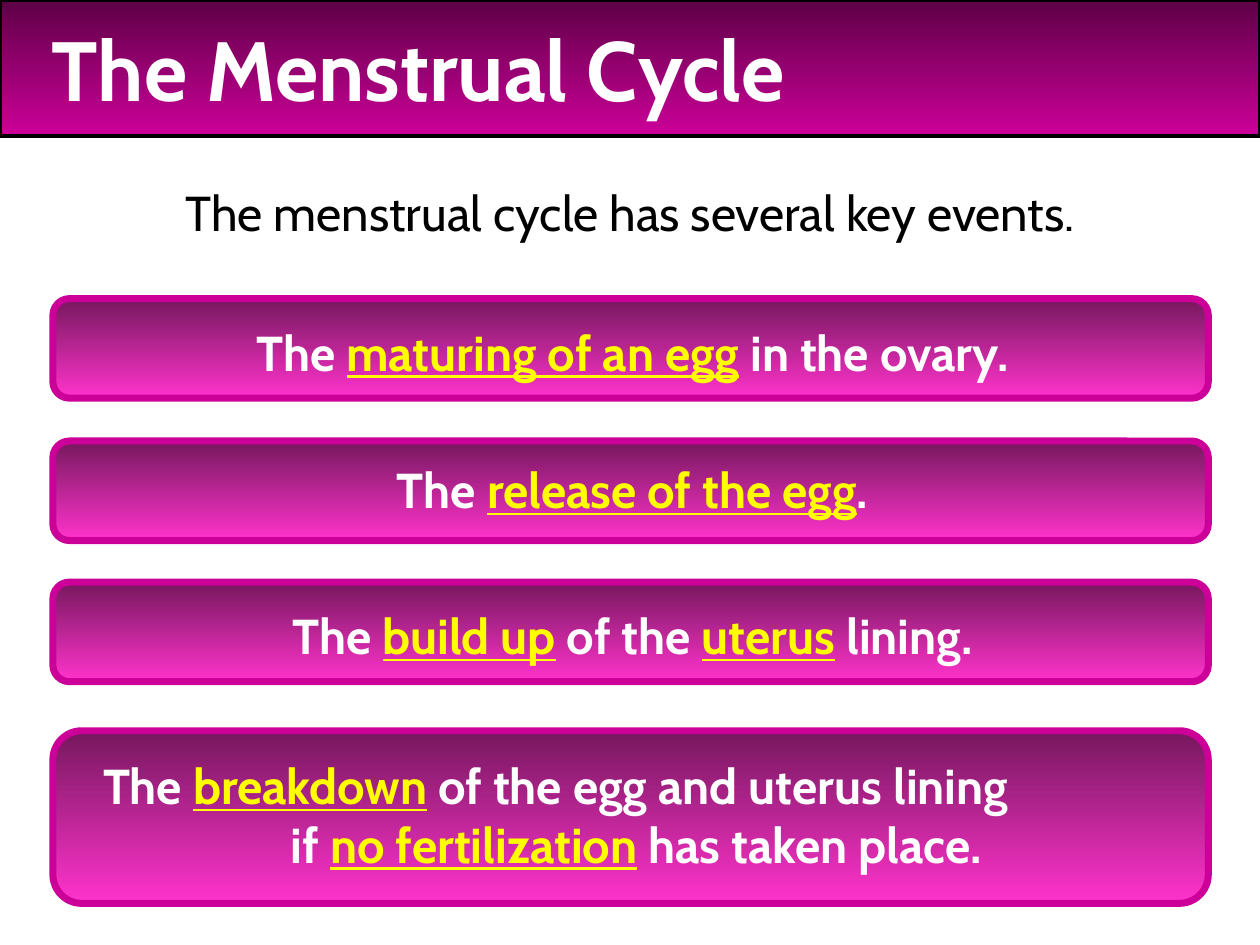
from dataclasses import dataclass

from pptx import Presentation
from pptx.dml.color import RGBColor
from pptx.enum.shapes import MSO_SHAPE
from pptx.enum.text import MSO_ANCHOR, MSO_AUTO_SIZE, PP_ALIGN
from pptx.util import Inches, Pt

FACE = "Cabin"
WHITE, BLACK, YELLOW, PINK = "FFFFFF", "000000", "FFFF00", "CC0099"


@dataclass
class Card:
    top: float
    height: float
    text_top: float
    lines: list[str]  # words between asterisks are key words
    indents: tuple[float, float] | None = None  # first line, later lines


CARDS = [
    Card(2.37, 0.79, 2.51, ["The *maturing of an egg* in the ovary."]),
    Card(3.5, 0.79, 3.6, ["The *release of the egg*."]),
    Card(4.62, 0.79, 4.76, ["The *build up* of the *uterus* lining."]),
    Card(5.8, 1.37, 5.95,
         ["The *breakdown* of the egg and uterus lining",
          "if *no fertilization* has taken place."], (0.04, 1.53)),
]


def rgb(code: str) -> RGBColor:
    return RGBColor.from_string(code)


def paint(shape, start: str, end: str, edge: str, width: float) -> None:
    """Give a shape a gradient from top to bottom and an outline."""
    shape.fill.gradient()
    shape.fill.gradient_angle = 270
    for stop, code, place in zip(shape.fill.gradient_stops, (start, end), (0, 1)):
        stop.color.rgb = rgb(code)
        stop.position = place
    shape.line.color.rgb = rgb(edge)
    shape.line.width = Pt(width)


def style(para, size: float, color: str, bold: bool) -> None:
    font = para.font
    font.name, font.size, font.bold = FACE, Pt(size), bold
    font.color.rgb = rgb(color)


def add_text(shapes, left: float, top: float, width: float, height: float):
    """Add a wrapped text box and return its first paragraph."""
    box = shapes.add_textbox(Inches(left), Inches(top), Inches(width), Inches(height))
    box.text_frame.word_wrap = True
    para = box.text_frame.paragraphs[0]
    para.alignment = PP_ALIGN.CENTER
    return para


def add_line(para, line: str) -> None:
    """Add the runs of one line, with its key words underlined in yellow."""
    for i, part in enumerate(line.split("*")):
        run = para.add_run()
        run.text = part
        if i % 2:
            run.font.underline = True
            run.font.color.rgb = rgb(YELLOW)


def add_card(slide, card: Card) -> None:
    shapes = slide.shapes.add_group_shape().shapes
    panel = shapes.add_shape(MSO_SHAPE.ROUNDED_RECTANGLE, Inches(0.42),
                             Inches(card.top), Inches(9.17), Inches(card.height))
    panel.shadow.inherit = False
    paint(panel, "76185E", "FF33CC", PINK, 4)

    para = add_text(shapes, 0.68, card.text_top, 8.68, 0.1 + 0.47 * len(card.lines))
    style(para, 28, WHITE, True)
    if card.indents:
        first, rest = card.indents
        para.alignment = PP_ALIGN.LEFT
        props = para._p.get_or_add_pPr()
        props.set("marL", str(Inches(rest)))
        props.set("indent", str(Inches(first - rest)))
    for i, line in enumerate(card.lines):
        if i:
            para.add_line_break()
        add_line(para, line)


def add_title(slide, text: str) -> None:
    title = slide.shapes.title
    title.left, title.top = Inches(0), Inches(0)
    title.width, title.height = Inches(10), Inches(1.08)
    paint(title, "5E0046", PINK, BLACK, 1.75)
    frame = title.text_frame
    frame.text = text
    frame.auto_size = MSO_AUTO_SIZE.NONE
    frame.vertical_anchor = MSO_ANCHOR.MIDDLE
    frame.margin_left = Inches(0.41)
    para = frame.paragraphs[0]
    para.alignment = PP_ALIGN.LEFT
    style(para, 48, WHITE, True)


def main() -> None:
    deck = Presentation()
    deck.slide_width, deck.slide_height = Inches(10), Inches(7.5)
    slide = deck.slides.add_slide(deck.slide_layouts[5])
    add_title(slide, "The Menstrual Cycle")
    intro = add_text(slide.shapes, 0, 1.4, 10, 0.57)
    style(intro, 28, BLACK, False)
    add_line(intro, "The menstrual cycle has several key events.")
    for card in CARDS:
        add_card(slide, card)
    deck.save("out.pptx")


if __name__ == "__main__":
    main()
